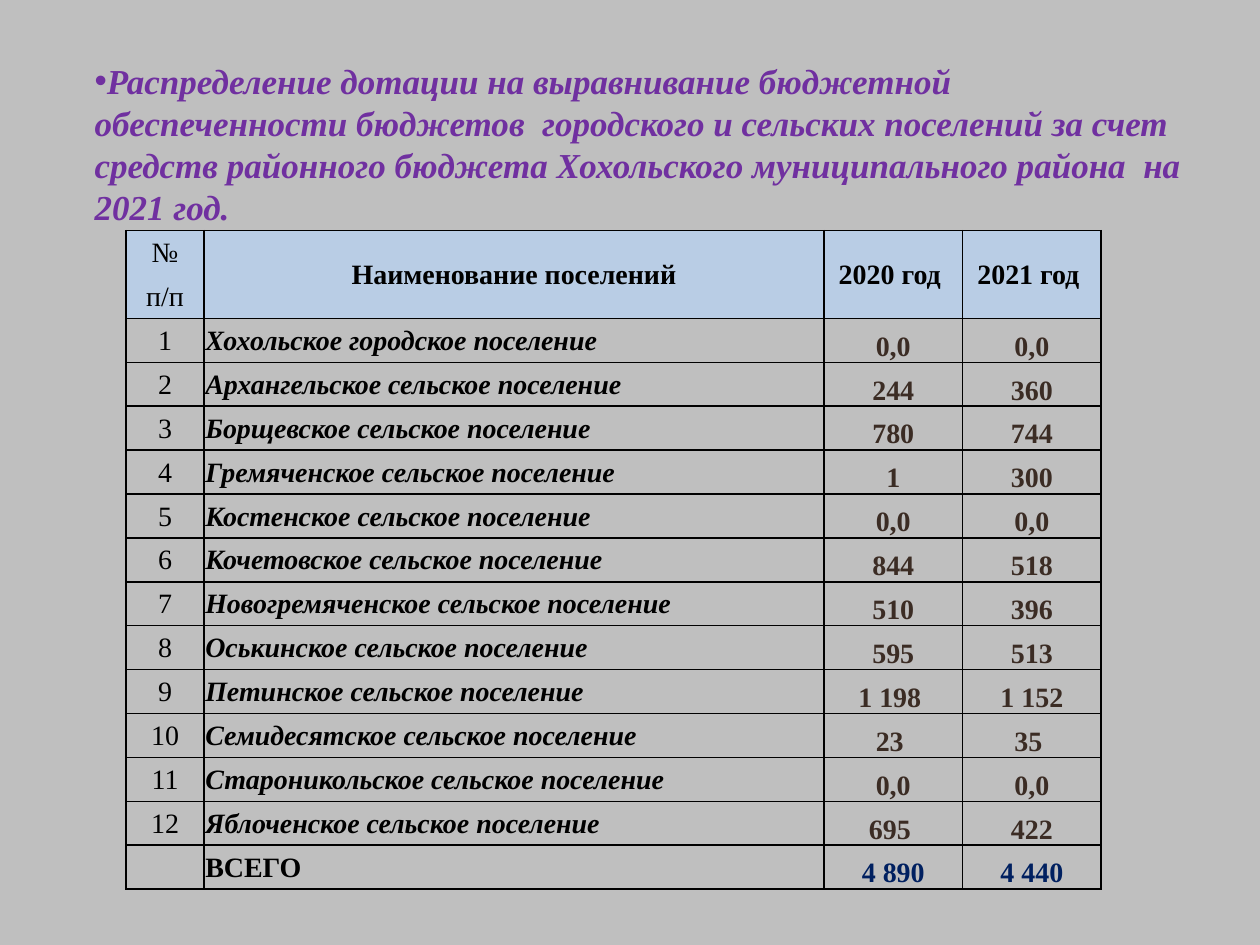
from lxml.etree import SubElement
from pptx import Presentation
from pptx.dml.color import RGBColor
from pptx.enum.text import MSO_ANCHOR, MSO_AUTO_SIZE, PP_ALIGN
from pptx.oxml.ns import qn
from pptx.util import Inches, Pt

# Content
HEADING = ("Распределение дотации на выравнивание бюджетной обеспеченности бюджетов  "
           "городского и сельских поселений за счет средств районного бюджета "
           "Хохольского муниципального района  на 2021 год.")
HEADER = [("№", "Наименование поселений", "2020 год ", "2021 год "),
          ("п/п", "", "", "")]
SETTLEMENTS = [
    ("Хохольское городское", "0,0", "0,0"),
    ("Архангельское сельское", "244", "360"),
    ("Борщевское сельское", "780", "744"),
    ("Гремяченское сельское", "1", "300"),
    ("Костенское сельское", "0,0", "0,0"),
    ("Кочетовское сельское", "844", "518"),
    ("Новогремяченское сельское", "510", "396"),
    ("Оськинское сельское", "595", "513"),
    ("Петинское сельское", "1 198 ", "1 152"),
    ("Семидесятское сельское", "23 ", "35 "),
    ("Староникольское сельское", "0,0", "0,0"),
    ("Яблоченское сельское", "695 ", "422"),
]
TOTAL = ("", "ВСЕГО", "4 890", "4 440")
ROWS = HEADER + [(str(number), f"{name} поселение", before, after)
                 for number, (name, before, after) in enumerate(SETTLEMENTS, 1)] + [TOTAL]

# Look
FONT = "Times New Roman"
GREY = RGBColor(0xBF, 0xBF, 0xBF)
PURPLE = RGBColor(0x70, 0x30, 0xA0)
LIGHT_BLUE = RGBColor(0xB9, 0xCD, 0xE5)
BLACK = RGBColor(0, 0, 0)
BROWN = RGBColor(0x3B, 0x2C, 0x24)
NAVY = RGBColor(0x00, 0x20, 0x60)
COLUMNS = [0.62, 4.92, 1.1, 1.1]
TABLE_HEIGHT = 5.23
LAST = len(ROWS) - 1


def set_font(font, size, color, bold=False, italic=False):
    values = {"name": FONT, "size": Pt(size), "bold": bold, "italic": italic}
    for key, value in values.items():
        setattr(font, key, value)
    font.color.rgb = color


def set_borders(cell, hidden=()):
    properties = cell._tc.get_or_add_tcPr()
    for side in ("lnL", "lnR", "lnT", "lnB"):
        line = SubElement(properties, qn(f"a:{side}"), w=str(Pt(1)))
        if side in hidden:
            SubElement(line, qn("a:noFill"))
        else:
            fill = SubElement(line, qn("a:solidFill"))
            SubElement(fill, qn("a:srgbClr"), val=str(BLACK))


def cell_style(row, column):
    """Return alignment, anchor, colour, bold and italic of a cell."""
    center, middle = PP_ALIGN.CENTER, MSO_ANCHOR.MIDDLE
    if row < len(HEADER) or column == 0:
        return center, middle, BLACK, column > 0, False
    if column == 1:
        return PP_ALIGN.JUSTIFY, middle, BLACK, True, row < LAST
    return center, MSO_ANCHOR.BOTTOM, NAVY if row == LAST else BROWN, True, False


def add_heading(page):
    page.shapes.title.element.getparent().remove(page.shapes.title.element)
    box = page.placeholders[1]
    box.left, box.top, box.width, box.height = map(Inches, (0.65, 0.42, 8.85, 1.19))
    frame = box.text_frame
    frame.word_wrap, frame.auto_size = True, MSO_AUTO_SIZE.NONE
    para = frame.paragraphs[0]
    properties = para._p.get_or_add_pPr()
    properties.set("marL", "0")
    properties.set("indent", "0")
    SubElement(properties, qn("a:buFont"), typeface="Arial")
    SubElement(properties, qn("a:buChar"), char="•")
    para.space_before = Pt(0)
    span = para.add_run()
    span.text = HEADING
    set_font(span.font, 20, PURPLE, bold=True, italic=True)


def add_grants_table(page):
    frame = page.shapes.add_table(len(ROWS), len(COLUMNS), Inches(1), Inches(1.83),
                                  Inches(sum(COLUMNS)), Inches(TABLE_HEIGHT))
    table = frame.table
    table.first_row = table.horz_banding = False
    for column, width in zip(table.columns, COLUMNS):
        column.width = Inches(width)
    for row in table.rows:
        row.height = Inches(TABLE_HEIGHT / len(ROWS))

    for r, texts in enumerate(ROWS):
        for c, text in enumerate(texts):
            cell = table.cell(r, c)
            align, anchor, color, bold, italic = cell_style(r, c)
            cell.margin_left = cell.margin_right = cell.margin_top = Inches(0.01)
            cell.margin_bottom = 0
            cell.vertical_anchor = anchor
            # The two lines of the number heading share one open frame
            hidden = {(0, 0): ("lnB",), (1, 0): ("lnT",)}.get((r, c), ())
            set_borders(cell, hidden)
            if r < len(HEADER):
                cell.fill.solid()
                cell.fill.fore_color.rgb = LIGHT_BLUE
            else:
                cell.fill.background()
            para = cell.text_frame.paragraphs[0]
            para.alignment = align
            if text:
                span = para.add_run()
                span.text = text
                set_font(span.font, 16, color, bold, italic)

    for c in range(1, len(COLUMNS)):
        table.cell(0, c).merge(table.cell(1, c))


def main():
    deck = Presentation()
    deck.slide_width, deck.slide_height = Inches(10), Inches(7.5)
    page = deck.slides.add_slide(deck.slide_layouts[1])
    page.background.fill.solid()
    page.background.fill.fore_color.rgb = GREY
    add_heading(page)
    add_grants_table(page)
    deck.save("out.pptx")


if __name__ == "__main__":
    main()
